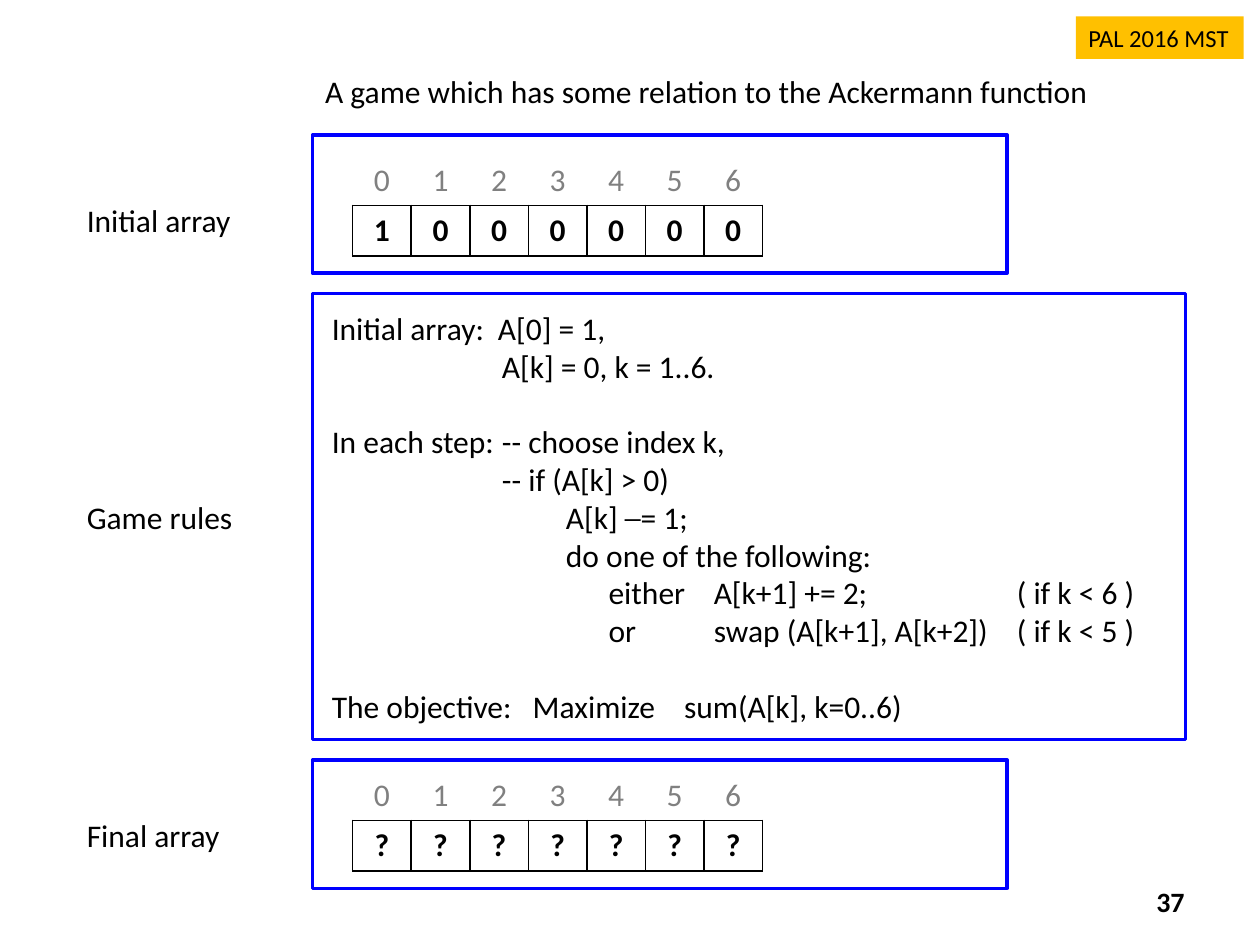
from lxml import etree
from pptx import Presentation
from pptx.dml.color import RGBColor
from pptx.enum.shapes import MSO_SHAPE
from pptx.enum.text import MSO_ANCHOR, MSO_AUTO_SIZE, PP_ALIGN
from pptx.oxml.ns import qn
from pptx.util import Cm, Pt

RECTANGLE = MSO_SHAPE.RECTANGLE
MIDDLE = MSO_ANCHOR.MIDDLE
NO_AUTOFIT = MSO_AUTO_SIZE.NONE
LEFT, CENTER, RIGHT = PP_ALIGN.LEFT, PP_ALIGN.CENTER, PP_ALIGN.RIGHT
BLACK = RGBColor(0, 0, 0)
GRAY = RGBColor(0x80, 0x80, 0x80)
WHITE = RGBColor(0xFF, 0xFF, 0xFF)
BLUE = RGBColor(0, 0, 0xFF)
AMBER = RGBColor(0xFF, 0xC0, 0)
FONT = "Calibri"

TITLE = "A game which has some relation to the Ackermann function"
BADGE = "PAL 2016 MST"
PAGE_NUMBER = "37"
INDEXES = "0123456"
ARRAYS = [
    {"label": "Initial array", "values": "1000000", "panel": (2.72, 2.79), "table_top": 3.12},
    {"label": "Final array", "values": "???????", "panel": (15.32, 2.59), "table_top": 15.52},
]
RULES_LABEL = "Game rules"
RULES_PANEL = (5.92, 8.99)

STEP, BODY, CHOICE, ACTION, CONDITION = 3.43, 4.72, 5.58, 7.7, 13.81
RULE_GROUPS = [
    [
        [(0, "Initial array:"), (3.35, "A[0] = 1,")],
        [(STEP, "A[k] = 0, k = 1..6.")],
    ],
    [
        [(0, "In each step:"), (STEP, "-- choose index k,")],
        [(STEP, "-- if (A[k] > 0)")],
        [(BODY, "A[k] ─= 1;")],
        [(BODY, "do one of the following:")],
        [(CHOICE, "either"), (ACTION, "A[k+1] += 2;"), (CONDITION, "( if k < 6 )")],
        [(CHOICE, "or"), (ACTION, "swap (A[k+1], A[k+2])"), (CONDITION, "( if k < 5 )")],
    ],
    [
        [(0, "The objective:"), (4.05, "Maximize"), (7.1, "sum(A[k], k=0..6)")],
    ],
]

PANEL_LEFT, ARRAY_PANEL_WIDTH, RULES_PANEL_WIDTH = 6.3, 14, 17.6
LABEL_LEFT, LABEL_WIDTH = 1.5, 4
TABLE_LEFT, COLUMN_WIDTH, ROW_HEIGHT = 7.11, 1.18, 1.02


def write(paragraph, text, size=18, color=BLACK, bold=False, align=LEFT):
    paragraph.alignment = align
    run = paragraph.add_run()
    run.text = text
    run.font.name = FONT
    run.font.size = Pt(size)
    run.font.bold = bold
    run.font.color.rgb = color


def add_rectangle(slide, left, top, width, height, fill=None, line=None):
    shape = slide.shapes.add_shape(RECTANGLE, Cm(left), Cm(top), Cm(width), Cm(height))
    shape.shadow.inherit = False
    if fill is None:
        shape.fill.background()
    else:
        shape.fill.solid()
        shape.fill.fore_color.rgb = fill
    if line is None:
        shape.line.fill.background()
    else:
        shape.line.color.rgb = line
        shape.line.width = Pt(2)
    return shape


def add_text(slide, text, left, top, width, **text_format):
    box = slide.shapes.add_textbox(Cm(left), Cm(top), Cm(width), Cm(ROW_HEIGHT))
    box.text_frame.word_wrap = True
    box.text_frame.vertical_anchor = MIDDLE
    write(box.text_frame.paragraphs[0], text, **text_format)


def add_title(slide):
    title = slide.shapes.title
    title.left, title.top = Cm(PANEL_LEFT), Cm(1.32)
    title.width, title.height = Cm(16.23), Cm(ROW_HEIGHT)
    frame = title.text_frame
    frame.auto_size = NO_AUTOFIT
    frame.word_wrap = False
    frame.vertical_anchor = MIDDLE
    write(frame.paragraphs[0], TITLE)


def set_borders(cell, sides):
    properties = cell._tc.get_or_add_tcPr()
    for side in sides:
        line = etree.SubElement(properties, qn(f"a:ln{side}"), w=str(Pt(1)))
        fill = etree.SubElement(line, qn("a:solidFill"))
        etree.SubElement(fill, qn("a:srgbClr"), val=str(BLACK))


def add_array_table(slide, values, top):
    count = len(INDEXES)
    table = slide.shapes.add_table(
        2, count, Cm(TABLE_LEFT), Cm(top), Cm(COLUMN_WIDTH * count), Cm(ROW_HEIGHT * 2)
    ).table
    table.first_row = False
    table.horz_banding = False
    for column, (index, value) in enumerate(zip(INDEXES, values)):
        table.columns[column].width = Cm(COLUMN_WIDTH)
        header, cell = table.cell(0, column), table.cell(1, column)
        set_borders(header, "B")
        header.fill.background()
        write(header.text_frame.paragraphs[0], index, color=GRAY, align=CENTER)
        set_borders(cell, "LRTB")
        cell.fill.solid()
        cell.fill.fore_color.rgb = WHITE
        write(cell.text_frame.paragraphs[0], value, bold=True, align=CENTER)


def add_tab_stops(paragraph, stops):
    tabs = etree.SubElement(paragraph._p.get_or_add_pPr(), qn("a:tabLst"))
    for stop in stops:
        etree.SubElement(tabs, qn("a:tab"), pos=str(Cm(stop)), algn="l")


def add_rules(slide):
    top, height = RULES_PANEL
    panel = add_rectangle(
        slide, PANEL_LEFT, top, RULES_PANEL_WIDTH, height, fill=WHITE, line=BLUE
    )
    frame = panel.text_frame
    frame.word_wrap = True
    frame.vertical_anchor = MIDDLE
    frame.margin_left = Cm(0.39)
    paragraph = frame.paragraphs[0]
    for group_number, group in enumerate(RULE_GROUPS):
        for line_number, pieces in enumerate(group):
            if group_number or line_number:
                paragraph = frame.add_paragraph()
            if group_number and not line_number:
                paragraph.space_before = Pt(21.6)
            add_tab_stops(paragraph, [stop for stop, _ in pieces if stop])
            write(paragraph, "".join(("\t" if stop else "") + text for stop, text in pieces))
    add_text(slide, RULES_LABEL, LABEL_LEFT, top + (height - ROW_HEIGHT) / 2, LABEL_WIDTH)


def main():
    presentation = Presentation()
    presentation.slide_width, presentation.slide_height = Cm(25.4), Cm(19.05)
    slide = presentation.slides.add_slide(presentation.slide_layouts[5])
    add_title(slide)
    add_rules(slide)
    for array in ARRAYS:
        top, height = array["panel"]
        add_array_table(slide, array["values"], array["table_top"])
        add_rectangle(slide, PANEL_LEFT, top, ARRAY_PANEL_WIDTH, height, line=BLUE)
        add_text(slide, array["label"], LABEL_LEFT, array["table_top"] + 0.81, LABEL_WIDTH)
    badge = add_rectangle(slide, 21.69, 0.33, 3.38, 0.86, fill=AMBER)
    badge.text_frame.word_wrap = False
    write(badge.text_frame.paragraphs[0], BADGE, size=14)
    add_text(slide, PAGE_NUMBER, 18.21, 17.65, 5.92, size=16, bold=True, align=RIGHT)
    presentation.save("out.pptx")


if __name__ == "__main__":
    main()
